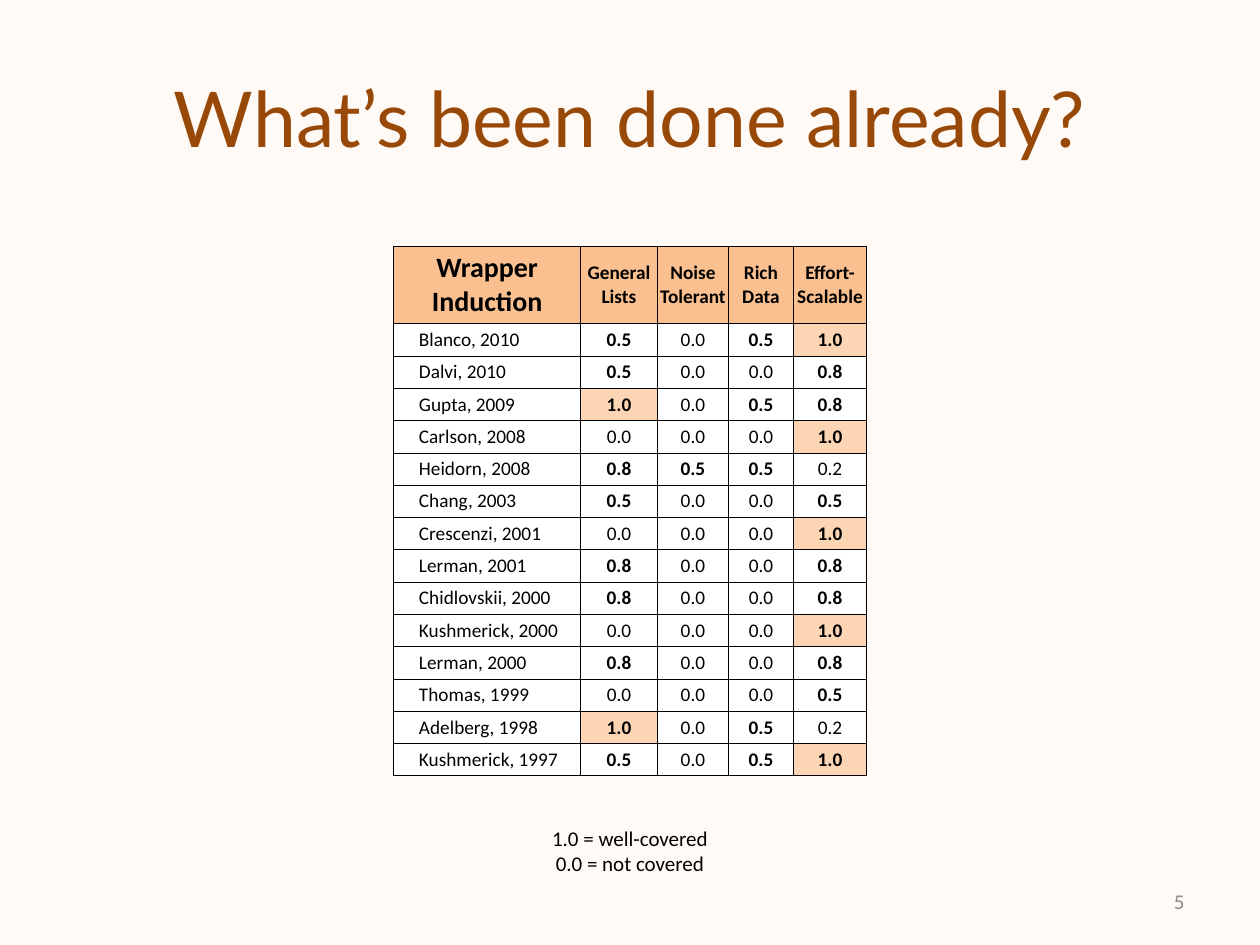
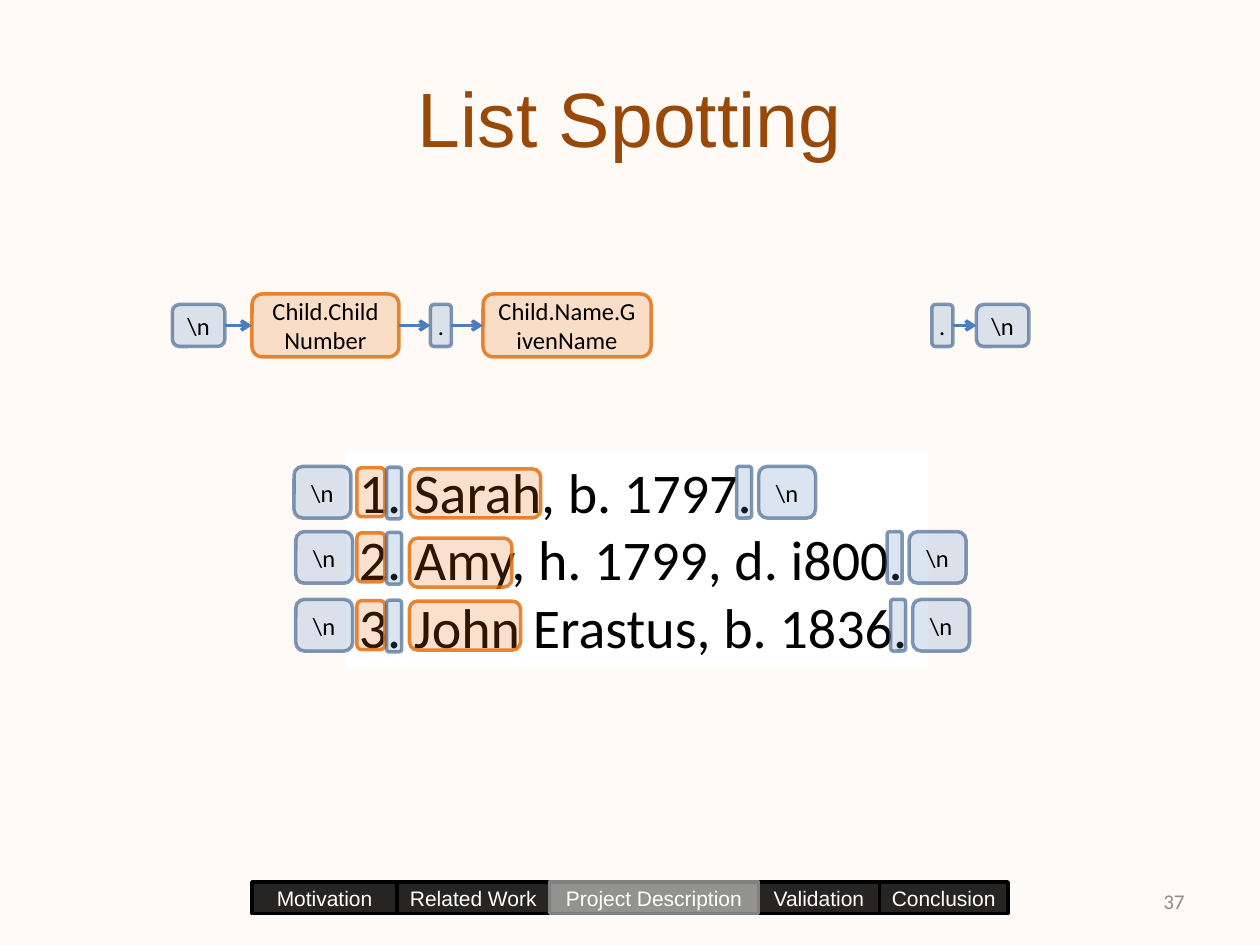
import pptx
import pptx.dml.color
import pptx.enum.shapes
import pptx.enum.text
import pptx.oxml
import pptx.oxml.ns
import pptx.util

Pt = pptx.util.Pt
qn = pptx.oxml.ns.qn
ALIGN = pptx.enum.text.PP_ALIGN
ANCHOR = pptx.enum.text.MSO_ANCHOR
SHAPE = pptx.enum.shapes.MSO_SHAPE

BACKGROUND = "FFFAF6"
TITLE_COLOR = "984807"
NUMBER_COLOR = "8C8C8C"
BLACK, WHITE, GREY = "000000", "FFFFFF", "808080"
HEADER_FILL, COVERED_FILL = "FAC090", "FCD5B5"
ARROW_COLOR = "4B7EBC"
BODY_FONT = "Calibri"

# fill, fill opacity, line, line opacity
DELIMITER = ("4F81BD", 20, "3A5F8C", 64)
FIELD = ("E46C0A", 20, "E46C0A", 82)
SECTION = (BLACK, 85, BLACK, 100)
CURRENT_SECTION = (GREY, 85, GREY, 100)

CRITERIA = ["General Lists", "Noise Tolerant", "Rich Data", "Effort-Scalable"]
COLUMN_WIDTHS = [106.75, 44, 40.5, 37.25, 41.75]
HEADER_HEIGHT, ROW_HEIGHT = 44, 18.46
COVERAGE = [
    ("Blanco, 2010", 0.5, 0.0, 0.5, 1.0),
    ("Dalvi, 2010", 0.5, 0.0, 0.0, 0.8),
    ("Gupta, 2009", 1.0, 0.0, 0.5, 0.8),
    ("Carlson, 2008", 0.0, 0.0, 0.0, 1.0),
    ("Heidorn, 2008", 0.8, 0.5, 0.5, 0.2),
    ("Chang, 2003", 0.5, 0.0, 0.0, 0.5),
    ("Crescenzi, 2001", 0.0, 0.0, 0.0, 1.0),
    ("Lerman, 2001", 0.8, 0.0, 0.0, 0.8),
    ("Chidlovskii, 2000", 0.8, 0.0, 0.0, 0.8),
    ("Kushmerick, 2000", 0.0, 0.0, 0.0, 1.0),
    ("Lerman, 2000", 0.8, 0.0, 0.0, 0.8),
    ("Thomas, 1999", 0.0, 0.0, 0.0, 0.5),
    ("Adelberg, 1998", 1.0, 0.0, 0.5, 0.2),
    ("Kushmerick, 1997", 0.5, 0.0, 0.5, 1.0),
]

SECTIONS = [("Motivation", 83), ("Related Work", 87), ("Project Description", 119.5),
            ("Validation", 69), ("Conclusion", 73.5)]

# Chains of pattern parts: text, left, width, height, style, inset
PATTERN = [
    [("\\n", 98.5, 30, 24, DELIMITER, 0),
     ("Child.ChildNumber", 144, 84, 36, FIELD, 7.2),
     (".", 246, 12, 24, DELIMITER, 0),
     ("Child.Name.GivenName", 276, 96, 36, FIELD, 7.2)],
    [(".", 532.5, 12, 24, DELIMITER, 0),
     ("\\n", 558, 30, 24, DELIMITER, 0)],
]
PATTERN_MIDDLE = 186

# text, row top, left of first newline, name top, name width, left of last dot
RECORDS = [
    ("1. Sarah, b. 1797.", 266.5, 168, 268, 75, 421),
    ("2. Amy, h. 1799, d. i800.", 303.75, 169, 307.5, 58.5, 507),
    ("3. John Erastus, b. 1836.", 342.5, 169, 343.5, 63.5, 509),
]


def color(hex_text):
    return pptx.dml.color.RGBColor.from_string(hex_text)


def write(frame, lines, size, font=BODY_FONT, ink=BLACK, align=ALIGN.CENTER,
          bold=False, anchor=ANCHOR.MIDDLE):
    frame.word_wrap = True
    frame.vertical_anchor = anchor
    frame.text = "\n".join(lines)
    for paragraph in frame.paragraphs:
        paragraph.alignment = align
        paragraph.font.size = Pt(size)
        paragraph.font.name = font
        paragraph.font.bold = bold
        paragraph.font.color.rgb = color(ink)


def add_text(slide, box, lines, size, **style):
    text_box = slide.shapes.add_textbox(*map(Pt, box))
    write(text_box.text_frame, lines, size, **style)
    return text_box


def set_opacity(properties, percent):
    """Make the solid fill directly inside the given XML element translucent."""
    fill_color = properties.find(qn("a:solidFill")).find(qn("a:srgbClr"))
    alpha = fill_color.makeelement(qn("a:alpha"), {"val": str(percent * 1000)})
    fill_color.append(alpha)


def add_block(shapes, kind, box, style, text="", size=14, inset=0, **text_style):
    """Add a translucent outlined shape with centred text."""
    fill, fill_opacity, line, line_opacity = style
    shape = shapes.add_shape(kind, *map(Pt, box))
    shape.shadow.inherit = False
    shape.fill.solid()
    shape.fill.fore_color.rgb = color(fill)
    shape.line.color.rgb = color(line)
    shape.line.width = Pt(2)
    properties = shape._element.spPr
    set_opacity(properties, fill_opacity)
    set_opacity(properties.find(qn("a:ln")), line_opacity)
    if text:
        frame = shape.text_frame
        frame.margin_left = frame.margin_right = Pt(inset)
        frame.margin_top = frame.margin_bottom = 0
        write(frame, [text], size, **text_style)


def add_arrow(slide, start, end, y):
    arrow = slide.shapes.add_connector(
        pptx.enum.shapes.MSO_CONNECTOR.STRAIGHT, Pt(start), Pt(y), Pt(end), Pt(y))
    arrow.line.color.rgb = color(ARROW_COLOR)
    arrow.line.width = Pt(2)
    properties = arrow._element.spPr
    line = properties.find(qn("a:ln"))
    line.append(line.makeelement(qn("a:tailEnd"), {"type": "arrow"}))
    properties.append(properties.makeelement(qn("a:effectLst"), {}))


def add_slide(presentation, title, title_font, number):
    slide = presentation.slides.add_slide(presentation.slide_layouts[6])
    slide.background.fill.solid()
    slide.background.fill.fore_color.rgb = color(BACKGROUND)
    add_text(slide, (36, 21.6, 648, 90), [title], 44, font=title_font, ink=TITLE_COLOR)
    add_text(slide, (516, 500.5, 168, 28.75), [str(number)], 12,
             ink=NUMBER_COLOR, align=ALIGN.RIGHT)
    return slide


def add_borders(cell):
    properties = cell._tc.get_or_add_tcPr()
    for position, side in enumerate(("lnL", "lnR", "lnT", "lnB")):
        properties.insert(position, pptx.oxml.parse_xml(
            f'<a:{side} xmlns:a="http://schemas.openxmlformats.org/drawingml/2006/main" '
            f'w="{Pt(0.5)}"><a:solidFill><a:srgbClr val="{BLACK}"/></a:solidFill></a:{side}>'))


def fill_cell(cell, text, fill, size=11, indent=0, **style):
    cell.margin_left = Pt(indent)
    cell.margin_right = cell.margin_top = cell.margin_bottom = 0
    cell.fill.solid()
    cell.fill.fore_color.rgb = color(fill)
    write(cell.text_frame, [text], size, **style)
    cell.vertical_anchor = ANCHOR.MIDDLE
    add_borders(cell)


def add_coverage_table(slide):
    """Bold marks scores of at least one half; a tint marks full coverage."""
    height = HEADER_HEIGHT + ROW_HEIGHT * len(COVERAGE)
    table = slide.shapes.add_table(
        len(COVERAGE) + 1, len(COLUMN_WIDTHS),
        Pt(225), Pt(141), Pt(sum(COLUMN_WIDTHS)), Pt(height)).table
    table.first_row = table.horz_banding = False
    for column, width in zip(table.columns, COLUMN_WIDTHS):
        column.width = Pt(width)
    for row in table.rows:
        row.height = Pt(ROW_HEIGHT)
    table.rows[0].height = Pt(HEADER_HEIGHT)

    fill_cell(table.cell(0, 0), "Wrapper Induction", HEADER_FILL, size=16, bold=True)
    for column, criterion in enumerate(CRITERIA, 1):
        fill_cell(table.cell(0, column), criterion, HEADER_FILL, bold=True)
    for row, (paper, *scores) in enumerate(COVERAGE, 1):
        fill_cell(table.cell(row, 0), paper, WHITE, indent=14.4, align=ALIGN.LEFT)
        for column, score in enumerate(scores, 1):
            fill_cell(table.cell(row, column), f"{score:.1f}",
                      COVERED_FILL if score == 1 else WHITE, bold=score >= 0.5)


def add_section_bar(slide, current):
    group = slide.shapes.add_group_shape()
    left = 144
    blocks = []
    for name, width in SECTIONS:
        blocks.append((name, (left, 504, width, 18)))
        left += width
    # The current section goes last so that its outline stays on top.
    for name, box in sorted(blocks, key=lambda block: block[0] == current):
        style = CURRENT_SECTION if name == current else SECTION
        add_block(group.shapes, SHAPE.RECTANGLE, box, style, name, size=12,
                  font="Arial", ink=WHITE)


def add_token(slide, box, style, text="", inset=0):
    add_block(slide.shapes, SHAPE.ROUNDED_RECTANGLE, box, style, text, inset=inset)


def add_pattern(slide):
    for chain in PATTERN:
        for text, left, width, height, style, inset in chain:
            add_token(slide, (left, PATTERN_MIDDLE - height / 2, width, height),
                      style, text, inset)
        for before, after in zip(chain, chain[1:]):
            add_arrow(slide, before[1] + before[2], after[1], PATTERN_MIDDLE)


def add_records(slide):
    text_box = add_text(slide, (198, 258, 332.5, 124), [record[0] for record in RECORDS],
                        32, align=ALIGN.LEFT, anchor=ANCHOR.TOP)
    text_box.fill.solid()
    text_box.fill.fore_color.rgb = color(WHITE)
    for _, top, newline_left, name_top, name_width, dot_left in RECORDS:
        add_token(slide, (newline_left, top, 32.5, 29.5), DELIMITER, "\\n")
        add_token(slide, (204, top + 0.75, 16, 28), FIELD)
        add_token(slide, (221, top + 0.5, 8.5, 29.5), DELIMITER)
        add_token(slide, (234, name_top, name_width, 28), FIELD)
        add_token(slide, (dot_left, top, 8.5, 29.5), DELIMITER)
        add_token(slide, (dot_left + 12.5, top, 32.5, 29.5), DELIMITER, "\\n")


def main():
    presentation = pptx.Presentation()
    presentation.slide_width, presentation.slide_height = Pt(720), Pt(540)

    related_work = add_slide(presentation, "What’s been done already?", "Lato", 5)
    add_coverage_table(related_work)
    add_text(related_work, (303, 468, 114, 36),
             ["1.0 = well-covered", "0.0 = not covered"], 12, anchor=ANCHOR.TOP)

    list_spotting = add_slide(presentation, "List Spotting", "Arial", 37)
    add_section_bar(list_spotting, "Project Description")
    add_records(list_spotting)
    add_pattern(list_spotting)

    presentation.save("out.pptx")


if __name__ == "__main__":
    main()
